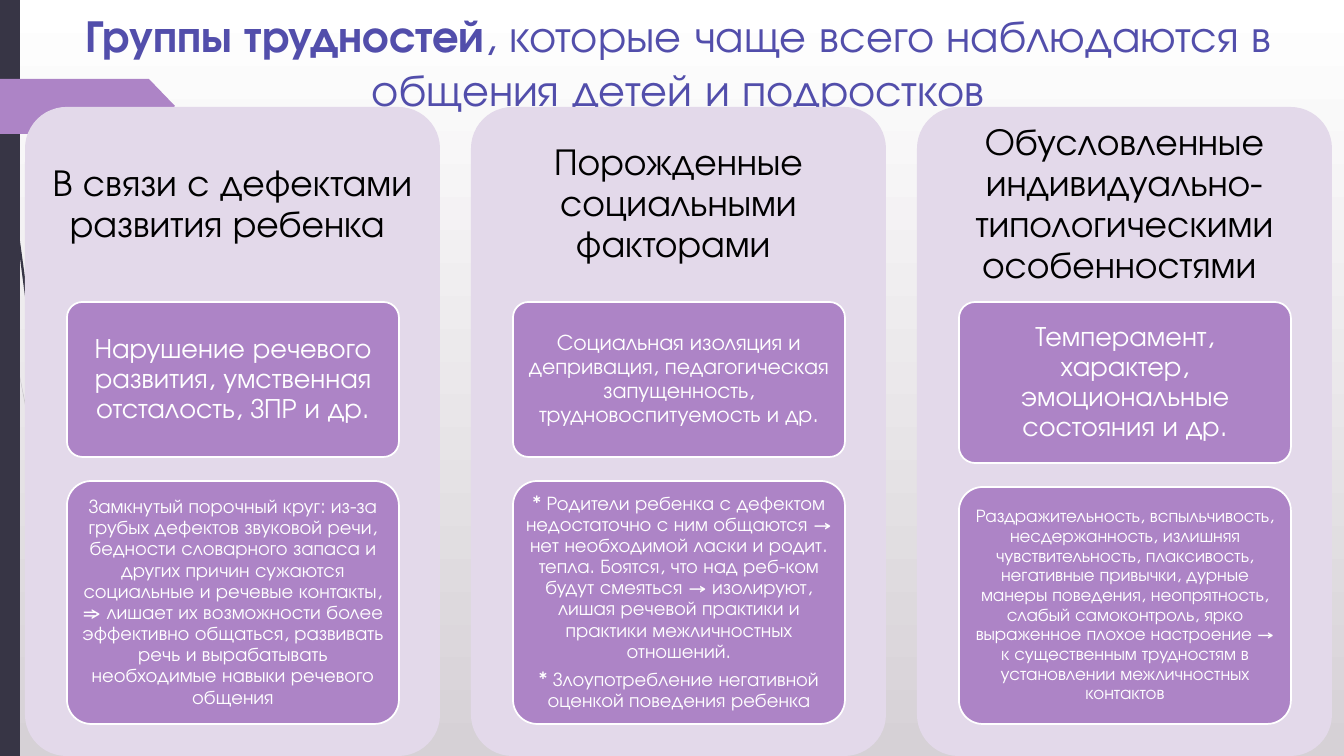
import pptx
import pptx.dml.color
import pptx.enum.dml
import pptx.enum.shapes
import pptx.enum.text
import pptx.oxml
import pptx.oxml.ns
import pptx.util

RGBColor = pptx.dml.color.RGBColor
WHITE = RGBColor(0xFF, 0xFF, 0xFF)
BLACK = RGBColor(0x00, 0x00, 0x00)
BACKGROUND_END = RGBColor(0xD6, 0xD1, 0xD6)
DARK = RGBColor(0x37, 0x35, 0x45)
PURPLE = RGBColor(0xAD, 0x84, 0xC6)
LILAC = RGBColor(0xE3, 0xD9, 0xEA)
TITLE_BLUE = RGBColor(0x52, 0x4E, 0xAB)

FONT = "TeX Gyre Adventor"
EMU_PER_PX = 914400 / 100.8
SLIDE_WIDTH, SLIDE_HEIGHT = 1344, 756
CARD_PITCH = 446
BOX_GAP = 24

# Each column: heading, then (text paragraphs, font size) of both boxes, then upper box height
COLUMNS = [
    ("В связи с дефектами развития ребенка ",
     (["Нарушение речевого развития, умственная отсталость, ЗПР и др."], 20),
     (["Замкнутый порочный круг: из-за грубых дефектов звуковой речи, бедности "
       "словарного запаса и других причин сужаются социальные и речевые контакты, "
       "⇒ лишает их возможности более эффективно общаться, развивать речь и "
       "вырабатывать необходимые навыки речевого общения"], 14),
     155),
    ("Порожденные социальными факторами ",
     (["Социальная изоляция и депривация, педагогическая запущенность, "
       "трудновоспитуемость и др."], 16),
     (["* Родители ребенка с дефектом недостаточно с ним общаются → нет необходимой "
       "ласки и родит. тепла. Боятся, что над реб-ком будут смеяться → изолируют, "
       "лишая речевой практики и практики межличностных отношений.",
       "* Злоупотребление негативной оценкой поведения ребенка"], 14),
     155),
    ("Обусловленные индивидуально-типологическими особенностями ",
     (["Темперамент, характер, эмоциональные состояния и др."], 20),
     (["Раздражительность, вспыльчивость, несдержанность, излишняя "
       "чувствительность, плаксивость, негативные привычки, дурные манеры поведения, "
       "неопрятность, слабый самоконтроль, ярко выраженное плохое настроение → "
       "к существенным трудностям в установлении межличностных контактов"], 13),
     161),
]


def px(length):
    return pptx.util.Emu(round(length * EMU_PER_PX))


def paint(shape, color, line=None):
    shape.shadow.inherit = False
    shape.fill.solid()
    shape.fill.fore_color.rgb = color
    if line is None:
        shape.line.fill.background()
    else:
        shape.line.color.rgb = line
        shape.line.width = pptx.util.Pt(1.25)


def add_outline(slide, points, color):
    builder = slide.shapes.build_freeform(*points[0], scale=EMU_PER_PX)
    builder.add_line_segments(points[1:], close=True)
    shape = builder.convert_to_shape()
    paint(shape, color)
    return shape


def add_panel(slide, box, color, line=None):
    kind = pptx.enum.shapes.MSO_SHAPE.ROUNDED_RECTANGLE
    shape = slide.shapes.add_shape(kind, *map(px, box))
    shape.adjustments[0] = 0.1
    paint(shape, color, line)
    return shape


def style_run(run, size, color, bold=False):
    run.font.name = FONT
    run.font.size = pptx.util.Pt(size)
    run.font.color.rgb = color
    run.font.bold = bold


def set_text(shape, texts, size, color, inset_x, inset_y):
    frame = shape.text_frame
    frame.word_wrap = True
    frame.vertical_anchor = pptx.enum.text.MSO_ANCHOR.MIDDLE
    frame.margin_left = frame.margin_right = px(inset_x)
    frame.margin_top = frame.margin_bottom = px(inset_y)
    frame.text = "\n".join(texts)
    for paragraph in frame.paragraphs:
        paragraph.alignment = pptx.enum.text.PP_ALIGN.CENTER
        paragraph.line_spacing = 0.9
        paragraph.space_after = pptx.util.Pt(round(size * 0.35, 1))
        for run in paragraph.runs:
            style_run(run, size, color)


def add_backdrop(slide):
    fill = slide.background.fill
    fill.gradient()
    fill.gradient_angle = 270
    for stop, color in zip(fill.gradient_stops, (WHITE, BACKGROUND_END)):
        stop.color.rgb = color

    # Thin sweeps beside the side bar
    pale_sweep = add_outline(slide, [(14, 348), (28, 420), (44, 484), (62, 524), (85, 604),
                                     (85, 591), (58, 526), (43, 478), (28, 416)], DARK)
    color_element = pale_sweep.fill._xPr.find(".//" + pptx.oxml.ns.qn("a:srgbClr"))
    alpha = pptx.oxml.parse_xml(
        '<a:alpha xmlns:a="http://schemas.openxmlformats.org/drawingml/2006/main" val="20000"/>')
    color_element.append(alpha)
    add_outline(slide, [(3, 0), (4, 48), (7, 111), (17, 235), (33, 358), (57, 485),
                        (55, 457), (36, 358), (19, 234), (8, 110), (5, 48), (4, 0)], DARK)

    # Side bar and arrow tab
    bar = slide.shapes.add_shape(pptx.enum.shapes.MSO_SHAPE.RECTANGLE,
                                 0, 0, px(20), px(SLIDE_HEIGHT))
    paint(bar, DARK)
    add_outline(slide, [(0, 79), (149, 79), (175, 106), (149, 134), (0, 134)], PURPLE)


def add_title(slide, box):
    title = slide.shapes.title
    title.left, title.top, title.width, title.height = map(px, box)
    frame = title.text_frame
    frame.auto_size = pptx.enum.text.MSO_AUTO_SIZE.NONE
    frame.vertical_anchor = pptx.enum.text.MSO_ANCHOR.MIDDLE
    paragraph = frame.paragraphs[0]
    paragraph.alignment = pptx.enum.text.PP_ALIGN.CENTER
    for text, bold in (("Группы трудностей", True),
                       (", которые чаще всего наблюдаются в общения детей и подростков", False)):
        run = paragraph.add_run()
        run.text = text
        style_run(run, 32.4, TITLE_BLUE, bold)


def add_column(slide, box, heading, upper, lower, upper_height):
    left, top, width, height = box
    add_panel(slide, box, LILAC)
    heading_box = slide.shapes.add_textbox(px(left), px(top), px(width), px(195))
    set_text(heading_box, [heading], 27, BLACK, 11, 11)

    # Two boxes stacked down to a common lower edge
    upper_top = top + 195
    lower_top = upper_top + upper_height + BOX_GAP
    lower_height = top + height - 32 - lower_top
    for (texts, size), box_top, box_height in ((upper, upper_top, upper_height),
                                               (lower, lower_top, lower_height)):
        panel = add_panel(slide, (left + 42, box_top, width - 83, box_height), PURPLE, WHITE)
        insets = (6, 4) if size == 20 else (4, 3)
        set_text(panel, texts, size, WHITE, *insets)


def main():
    presentation = pptx.Presentation()
    presentation.slide_width = px(SLIDE_WIDTH)
    presentation.slide_height = px(SLIDE_HEIGHT)
    slide = presentation.slides.add_slide(presentation.slide_layouts[5])
    add_backdrop(slide)
    add_title(slide, (25, 0, 1307, 123))
    for index, column in enumerate(COLUMNS):
        add_column(slide, (25 + index * CARD_PITCH, 107, 415, 649), *column)
    presentation.save("out.pptx")


if __name__ == "__main__":
    main()
